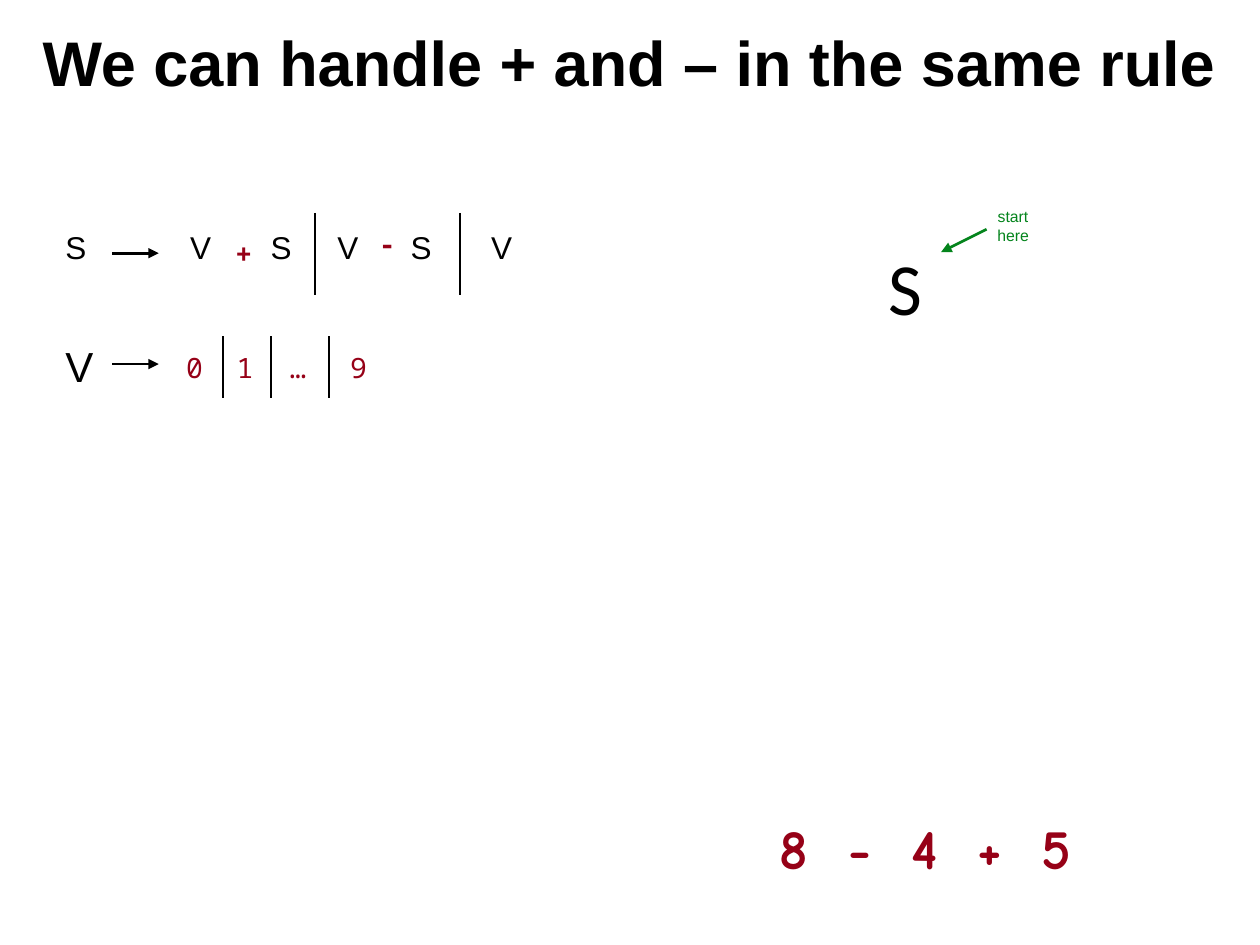
import pptx
import pptx.dml.color
import pptx.enum.shapes
import pptx.enum.text
import pptx.oxml.xmlchemy
import pptx.util
from pptx.util import Inches

BLACK = pptx.dml.color.RGBColor(0x00, 0x00, 0x00)
RED = pptx.dml.color.RGBColor(0x96, 0x01, 0x17)
GREEN = pptx.dml.color.RGBColor(0x04, 0x84, 0x1C)

# Text formats
TITLE = {"name": "Arial", "size": pptx.util.Pt(36), "bold": True}
SYMBOL = {"name": "Arial", "size": pptx.util.Pt(18)}
RULE_HEAD = {"name": "Arial", "size": pptx.util.Pt(24)}
DIGIT = {"name": "Noto Sans Mono", "size": pptx.util.Pt(16)}
OPERATOR = {**DIGIT, "bold": True}
EXPRESSION = {"name": "Comic Neue", "size": pptx.util.Pt(32), "bold": True}
ROOT = {"name": "Calibri", "size": pptx.util.Pt(42)}
NOTE = {"name": "Arial", "size": pptx.util.Pt(9)}

presentation = pptx.Presentation()
presentation.slide_width = Inches(10)
presentation.slide_height = Inches(7.5)
slide = presentation.slides.add_slide(presentation.slide_layouts[5])


def write_text(shape, text, font_format, color, centered=False):
    frame = shape.text_frame
    frame.word_wrap = True
    frame.auto_size = pptx.enum.text.MSO_AUTO_SIZE.NONE
    paragraph = frame.paragraphs[0]
    alignments = pptx.enum.text.PP_ALIGN
    paragraph.alignment = alignments.CENTER if centered else alignments.LEFT
    run = paragraph.add_run()
    run.text = text
    for attribute, value in font_format.items():
        setattr(run.font, attribute, value)
    run.font.color.rgb = color


def draw_line(start, end, color=BLACK, arrow=False):
    connector = slide.shapes.add_connector(
        pptx.enum.shapes.MSO_CONNECTOR.STRAIGHT,
        *(Inches(length) for length in (*start, *end)))
    connector.line.color.rgb = color
    connector.line.width = pptx.util.Pt(1.5)
    if arrow:
        line = connector.line._get_or_add_ln()
        head = pptx.oxml.xmlchemy.OxmlElement("a:tailEnd")
        head.set("type", "triangle")
        line.append(head)
    properties = connector._element.spPr
    properties.append(pptx.oxml.xmlchemy.OxmlElement("a:effectLst"))


# Title
title = slide.shapes.title
title.left, title.top = Inches(0.08), Inches(0.13)
title.width, title.height = Inches(9.83), Inches(0.71)
title.text_frame.vertical_anchor = pptx.enum.text.MSO_ANCHOR.MIDDLE
write_text(title, "We can handle + and – in the same rule", TITLE, BLACK, centered=True)

# Text pieces: text, left, top, width, height, format, color
pieces = [
    ("V", 0.42, 2.65, 0.6, 0.5, RULE_HEAD, BLACK),
    ("+", 1.77, 1.83, 0.34, 0.37, OPERATOR, RED),
    ("-", 2.91, 1.75, 0.34, 0.37, OPERATOR, RED),
    ("S", 6.95, 1.87, 0.47, 0.81, ROOT, BLACK),
    ("start here", 7.75, 1.59, 0.58, 0.4, NOTE, GREEN),
    ("8  -  4  +  5", 6.09, 6.41, 3.13, 0.64, EXPRESSION, RED),
]
# Symbols of the S rule
for symbol, left in zip("SVSVSV", (0.42, 1.41, 2.05, 2.58, 3.16, 3.8)):
    pieces.append((symbol, left, 1.76, 0.42, 0.5, SYMBOL, BLACK))
# Digits of the V rule
for digit, left in zip("01…9", (1.38, 1.78, 2.2, 2.68)):
    pieces.append((digit, left, 2.73, 0.34, 0.37, DIGIT, RED))

for text, left, top, width, height, font_format, color in pieces:
    box = slide.shapes.add_textbox(
        Inches(left), Inches(top), Inches(width), Inches(height))
    write_text(box, text, font_format, color, centered=font_format is NOTE)

# Arrows of both rules and of the start note
for y in (2.01, 2.89):
    draw_line((0.89, y), (1.26, y), arrow=True)
draw_line((7.83, 1.82), (7.47, 2), GREEN, arrow=True)

# Bars between the alternatives
for top, bottom, positions in ((1.69, 2.34, (2.5, 3.65)), (2.67, 3.16, (1.77, 2.15, 2.61))):
    for x in positions:
        draw_line((x, top), (x, bottom))

presentation.save("out.pptx")
